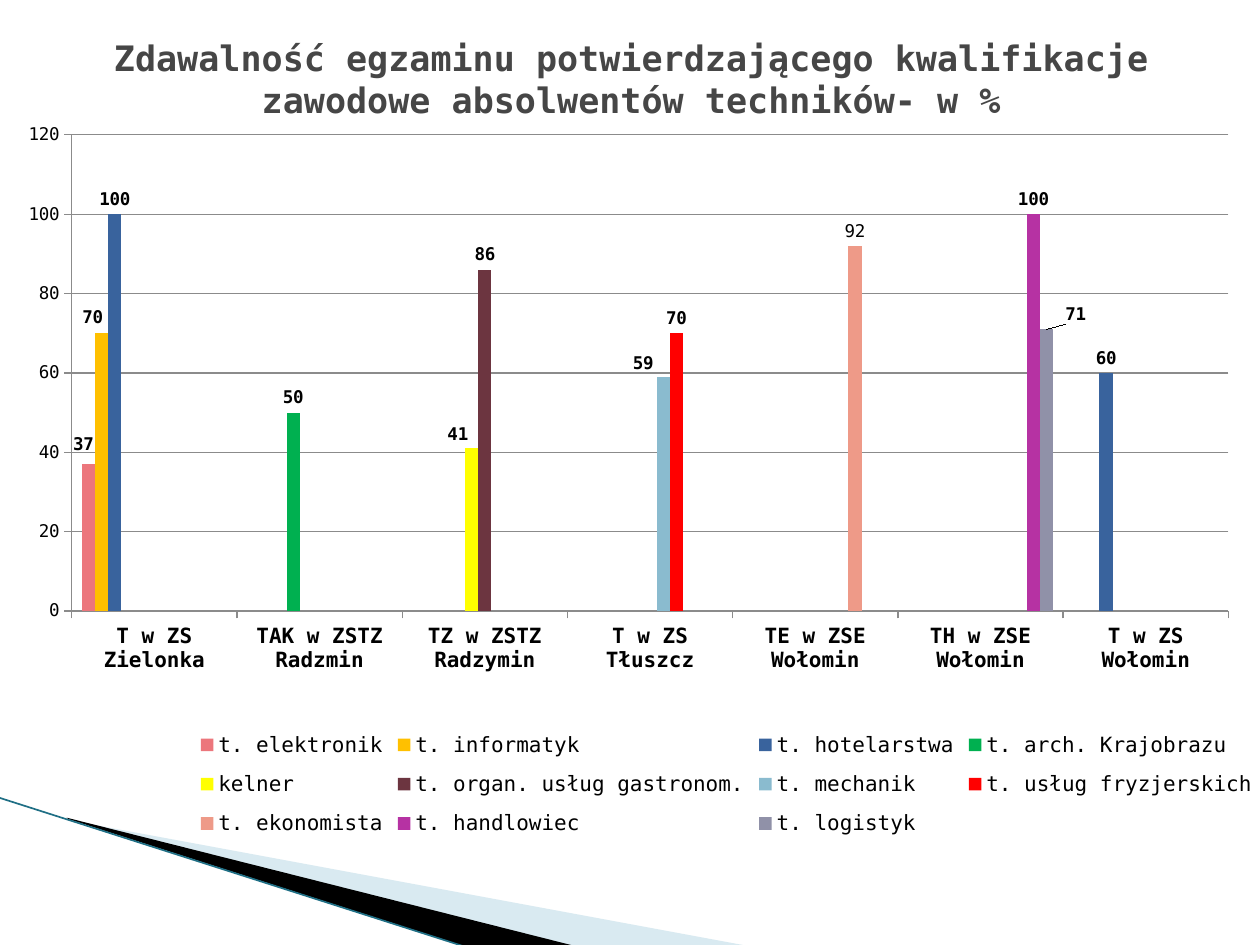
"""Build a slide with a clustered column chart of vocational exam pass rates."""
from lxml.etree import SubElement
from pptx import Presentation
from pptx.chart.data import CategoryChartData
from pptx.dml.color import RGBColor
from pptx.enum.chart import XL_CHART_TYPE, XL_LABEL_POSITION, XL_LEGEND_POSITION, XL_TICK_MARK
from pptx.enum.shapes import MSO_CONNECTOR
from pptx.enum.text import MSO_ANCHOR, PP_ALIGN
from pptx.oxml import parse_xml
from pptx.oxml.ns import nsdecls, qn
from pptx.util import Inches, Pt

FONT = "DejaVu Sans Mono"
COLORS = {"title": "464646", "text": "000000", "grid": "8B8B8B",
          "pale": "A0CBDC", "dark": "000000", "edge": "1F6F85"}
TITLE = "Zdawalność egzaminu potwierdzającego kwalifikacje zawodowe absolwentów techników- w %"
CATEGORIES = ["T w ZS Zielonka", "TAK w ZSTZ Radzmin", "TZ w ZSTZ Radzymin", "T w ZS Tłuszcz",
              "TE w ZSE Wołomin", "TH w ZSE Wołomin", "T w ZS Wołomin"]
SERIES = [
    ("t. elektronik", "EC767C", {0: 37}),
    ("t. informatyk", "FFC000", {0: 70}),
    ("t. hotelarstwa", "39639D", {0: 100, 6: 60}),
    ("t. arch. Krajobrazu", "00B050", {1: 50}),
    ("kelner", "FFFF00", {2: 41}),
    ("t. organ. usług gastronom.", "6C3540", {2: 86}),
    ("t. mechanik", "8ABBCF", {3: 59}),
    ("t. usług fryzjerskich", "FF0000", {3: 70}),
    ("t. ekonomista", "EE9A88", {4: 92}),
    ("t. handlowiec", "B632A3", {5: 100}),
    ("t. logistyk", "9091A8", {5: 71}),
]
MOVED_LABELS = {
    "t. elektronik": (0, -0.04, -0.04),
    "t. informatyk": (0, -0.07, -0.01),
    "kelner": (2, -0.11, 0.01),
    "t. mechanik": (3, -0.16, 0.01),
    "t. logistyk": (5, 0.23, 0),
}
PLAIN_LABELS = {"t. ekonomista"}
CHART_BOX = (0.2, 0.73, 9.8, 6.56)
PLOT_BOX = (0.57, 1.07, 9.18, 3.78)
LEGEND_BOX = (1.53, 5.7, 8.47, 1.05)
WEDGES = [
    ("pale", 40, [(0.55, 6.51), (5.95, 7.51), (4.56, 7.51), (0.55, 6.5)]),
    ("dark", 100, [(0.53, 6.49), (4.57, 7.51), (3.72, 7.52), (0.54, 6.5)]),
]
EDGE = [(-0.01, 6.33), (3.71, 7.52)]
NO_LEADERS = (
    f'<c:extLst {nsdecls("c")}><c:ext uri="{{CE6537A1-D6FC-4f65-9D91-7224C49458BB}}" '
    'xmlns:c15="http://schemas.microsoft.com/office/drawing/2012/chart">'
    '<c15:showLeaderLines val="0"/></c:ext></c:extLst>')


def rgb(value):
    return RGBColor.from_string(COLORS.get(value, value))


def set_font(font, size, bold=False, color="text"):
    for name, value in {"name": FONT, "size": Pt(size), "bold": bold}.items():
        setattr(font, name, value)
    font.color.rgb = rgb(color)


def make_layout(values):
    items = "".join(f'<c:{tag} val="{value}"/>' for tag, value in values.items())
    return parse_xml(f'<c:layout {nsdecls("c")}><c:manualLayout>{items}</c:manualLayout></c:layout>')


def chart_fractions(box):
    left, top, width, height = CHART_BOX
    x, y, w, h = box
    return {"xMode": "edge", "yMode": "edge", "x": (x - left) / width, "y": (y - top) / height,
            "w": w / width, "h": h / height}


def add_wedge(s, color, opacity, points):
    start, *rest = [(Inches(x), Inches(y)) for x, y in points]
    builder = s.shapes.build_freeform(*start)
    builder.add_line_segments(rest, close=True)
    sp = builder.convert_to_shape()
    sp.shadow.inherit = False
    sp.fill.solid()
    sp.fill.fore_color.rgb = rgb(color)
    sp.line.fill.background()
    if opacity < 100:
        fill = sp._element.spPr.find(qn("a:solidFill"))
        SubElement(fill[0], qn("a:alpha"), val=str(opacity * 1000))


def add_edge(s):
    ends = [Inches(v) for point in EDGE for v in point]
    line = s.shapes.add_connector(MSO_CONNECTOR.STRAIGHT, *ends)
    line.line.color.rgb = rgb("edge")
    line.line.width = Pt(0.95)
    SubElement(line._element.spPr, qn("a:effectLst"))


def add_title(s):
    tf = s.shapes.add_textbox(Inches(0.51), Inches(0), Inches(9), Inches(1.25)).text_frame
    tf.word_wrap = True
    tf.vertical_anchor = MSO_ANCHOR.MIDDLE
    p = tf.paragraphs[0]
    p.alignment = PP_ALIGN.CENTER
    r = p.add_run()
    r.text = TITLE
    set_font(r.font, 20, True, "title")


def move_label(series, index, dx, dy):
    label = series.points[index].data_label
    set_font(label.font, 10, True)
    label.position = XL_LABEL_POSITION.OUTSIDE_END
    layout = make_layout({"x": dx / CHART_BOX[2], "y": dy / CHART_BOX[3]})
    series._element.xpath(".//c:dLbl")[0].insert(1, layout)


def format_series(series, color):
    series.format.fill.solid()
    series.format.fill.fore_color.rgb = rgb(color)
    labels = series.data_labels
    for name, value in {"show_value": True, "position": XL_LABEL_POSITION.OUTSIDE_END}.items():
        setattr(labels, name, value)
    set_font(labels.font, 10, series.name not in PLAIN_LABELS)
    if series.name in MOVED_LABELS:
        move_label(series, *MOVED_LABELS[series.name])
    labels._element.append(parse_xml(NO_LEADERS))


def add_pass_rates(s):
    data = CategoryChartData()
    data.categories = CATEGORIES
    for name, _, values in SERIES:
        data.add_series(name, [values.get(i) for i in range(len(CATEGORIES))])
    box = [Inches(v) for v in CHART_BOX]
    chart = s.shapes.add_chart(XL_CHART_TYPE.COLUMN_CLUSTERED, *box, data).chart
    chart.has_title = False
    set_font(chart.font, 10)
    plot = chart.plots[0]
    for name, value in {"gap_width": 150, "overlap": 0, "vary_by_categories": False}.items():
        setattr(plot, name, value)
    for series, (_, color, _) in zip(plot.series, SERIES):
        format_series(series, color)

    for axis, size, bold in [(chart.category_axis, 12, True), (chart.value_axis, 10, False)]:
        axis.major_tick_mark = XL_TICK_MARK.OUTSIDE
        axis.format.line.color.rgb = rgb("grid")
        set_font(axis.tick_labels.font, size, bold)
    axis = chart.value_axis
    for name, value in {"minimum_scale": 0, "maximum_scale": 120, "major_unit": 20,
                        "has_major_gridlines": True}.items():
        setattr(axis, name, value)
    axis.major_gridlines.format.line.color.rgb = rgb("grid")

    chart.has_legend = True
    legend = chart.legend
    legend.position = XL_LEGEND_POSITION.BOTTOM
    legend.include_in_layout = False
    set_font(legend.font, 12)

    area = plot._element.getparent()
    for parent, index, values in [
        (area, 0, {"layoutTarget": "inner", **chart_fractions(PLOT_BOX)}),
        (legend._element, 1, chart_fractions(LEGEND_BOX)),
    ]:
        for old in parent.findall(qn("c:layout")):
            parent.remove(old)
        parent.insert(index, make_layout(values))


def main():
    prs = Presentation()
    prs.slide_width, prs.slide_height = Inches(10), Inches(7.5)
    s = prs.slides.add_slide(prs.slide_layouts[6])
    for wedge in WEDGES:
        add_wedge(s, *wedge)
    add_edge(s)
    add_title(s)
    add_pass_rates(s)
    prs.save("out.pptx")


if __name__ == "__main__":
    main()
